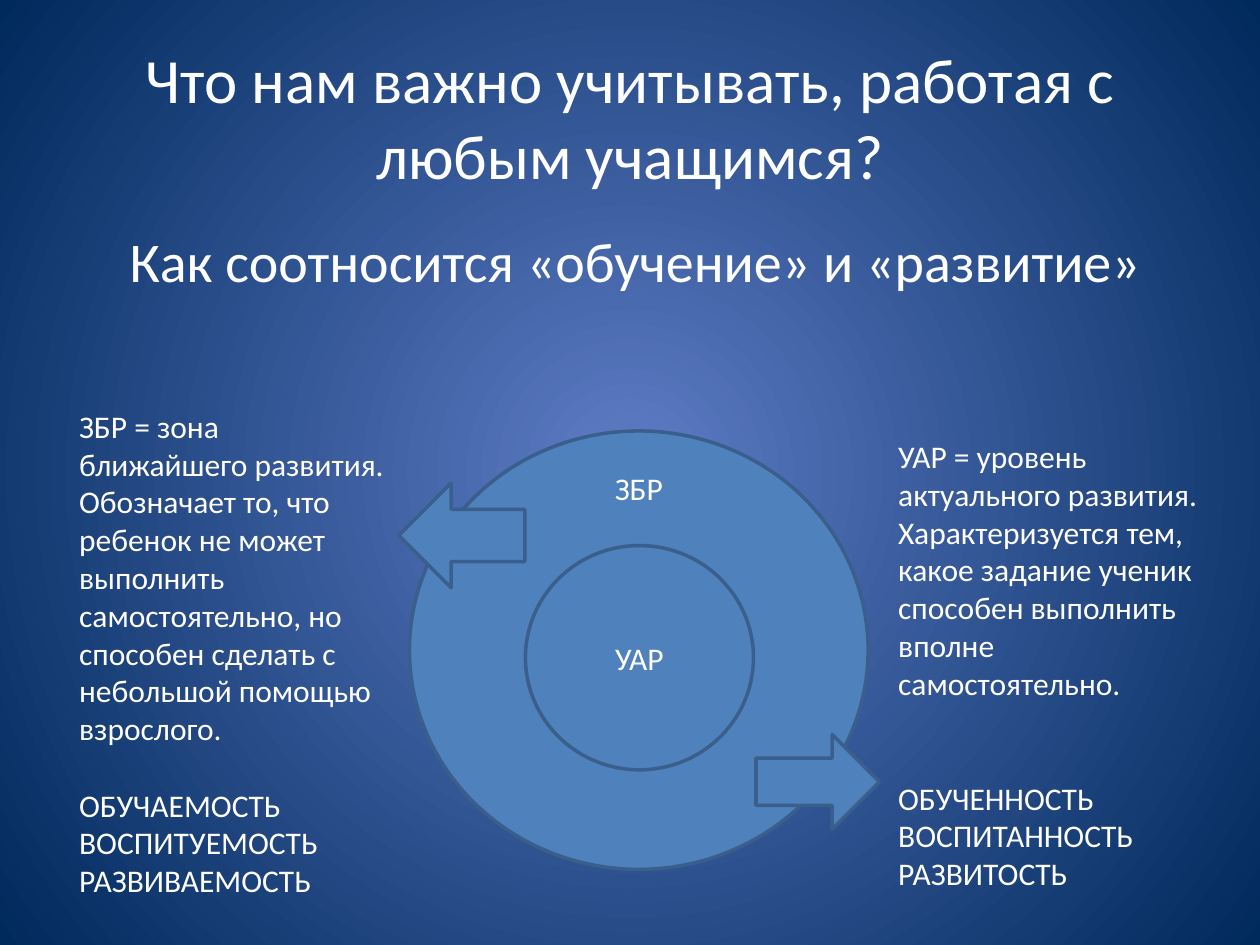
from dataclasses import dataclass

from lxml.etree import SubElement
from pptx import Presentation
from pptx.dml.color import RGBColor
from pptx.enum.shapes import MSO_SHAPE
from pptx.enum.text import MSO_ANCHOR, PP_ALIGN
from pptx.oxml.ns import qn
from pptx.util import Inches, Pt

COLORS = {
    "center": "5E7CC5",
    "edge": "00295C",
    "fill": "4F81BD",
    "outline": "3A5F8C",
    "text": "FFFFFF",
}
FONT = "Calibri"
LINE_GAP = 22


@dataclass(frozen=True)
class Box:
    left: float
    top: float
    width: float
    height: float

    def lengths(self) -> list:
        return [Inches(v) for v in (self.left, self.top, self.width, self.height)]


@dataclass(frozen=True)
class Figure:
    preset: MSO_SHAPE
    box: Box
    rotation: float = 0
    label: str = ""


@dataclass(frozen=True)
class Line:
    text: str
    space_before: float = 0


@dataclass(frozen=True)
class Note:
    box: Box
    lines: tuple
    size: float = 18
    align: PP_ALIGN = PP_ALIGN.LEFT


NOTES = [
    Note(Box(0.42, 1.75, 9.25, 5.42),
         (Line("Как соотносится «обучение» и «развитие»", 6.4),),
         size=32, align=PP_ALIGN.CENTER),
    Note(Box(0.53, 3.18, 2.63, 4.04), (
        Line("ЗБР = зона ближайшего развития. Обозначает то, что ребенок не может "
             "выполнить самостоятельно, но способен сделать с небольшой помощью взрослого."),
        Line("ОБУЧАЕМОСТЬ\vВОСПИТУЕМОСТЬ\vРАЗВИВАЕМОСТЬ", LINE_GAP),
    )),
    Note(Box(7.03, 3.42, 2.72, 3.74), (
        Line("УАР = уровень актуального развития."),
        Line("Характеризуется тем, какое задание ученик способен выполнить "
             "вполне самостоятельно."),
        Line("ОБУЧЕННОСТЬ", 2 * LINE_GAP),
        Line("ВОСПИТАННОСТЬ"),
        Line("РАЗВИТОСТЬ"),
    )),
]
CIRCLES = [
    Figure(MSO_SHAPE.OVAL, Box(3.25, 3.42, 3.64, 3.48)),
    Figure(MSO_SHAPE.OVAL, Box(4.17, 4.33, 1.81, 1.78), label="УАР"),
]
ZONE_LABEL = Note(Box(4.58, 3.67, 0.98, 0.4), (Line("ЗБР"),), align=PP_ALIGN.CENTER)
ARROWS = [
    Figure(MSO_SHAPE.DOWN_ARROW, Box(3.25, 3.75, 0.83, 1), rotation=90),
    Figure(MSO_SHAPE.RIGHT_ARROW, Box(6, 5.83, 0.98, 0.75)),
]


def write_text(text_frame, lines: tuple, *, size: float = 18,
               align: PP_ALIGN = PP_ALIGN.LEFT,
               anchor: MSO_ANCHOR = MSO_ANCHOR.TOP) -> None:
    text_frame.word_wrap = True
    text_frame.vertical_anchor = anchor
    for index, line in enumerate(lines):
        paragraph = text_frame.add_paragraph() if index else text_frame.paragraphs[0]
        paragraph.text = line.text
        paragraph.alignment = align
        paragraph.space_before = Pt(line.space_before)
        for run in paragraph.runs:
            run.font.name = FONT
            run.font.size = Pt(size)
            run.font.color.rgb = RGBColor.from_string(COLORS["text"])


def paint_background(slide) -> None:
    fill = slide.background.fill
    fill.gradient()
    for stop, name in zip(fill.gradient_stops, ("center", "edge")):
        stop.color.rgb = RGBColor.from_string(COLORS[name])
    gradient = slide.element.find(".//" + qn("a:gradFill"))
    gradient.remove(gradient.find(qn("a:lin")))
    circle = SubElement(gradient, qn("a:path"), {"path": "circle"})
    SubElement(circle, qn("a:fillToRect"), {side: "50000" for side in "ltrb"})


def add_title(slide, text: str, box: Box) -> None:
    title = slide.shapes.title
    title.left, title.top, title.width, title.height = box.lengths()
    write_text(title.text_frame, (Line(text),), size=36,
               align=PP_ALIGN.CENTER, anchor=MSO_ANCHOR.MIDDLE)


def add_note(slide, note: Note) -> None:
    shape = slide.shapes.add_textbox(*note.box.lengths())
    write_text(shape.text_frame, note.lines, size=note.size, align=note.align)


def add_figure(slide, figure: Figure) -> None:
    shape = slide.shapes.add_shape(figure.preset, *figure.box.lengths())
    shape.rotation = figure.rotation
    shape.shadow.inherit = False
    shape.fill.solid()
    shape.fill.fore_color.rgb = RGBColor.from_string(COLORS["fill"])
    shape.line.color.rgb = RGBColor.from_string(COLORS["outline"])
    shape.line.width = Pt(2)
    if figure.label:
        write_text(shape.text_frame, (Line(figure.label),),
                   align=PP_ALIGN.CENTER, anchor=MSO_ANCHOR.MIDDLE)


def main() -> None:
    presentation = Presentation()
    presentation.slide_width, presentation.slide_height = Inches(10), Inches(7.5)
    slide = presentation.slides.add_slide(presentation.slide_layouts[5])
    paint_background(slide)
    add_title(slide, "Что нам важно учитывать, работая с любым учащимся?",
              Box(0.5, 0.3, 9, 1.25))
    for note in NOTES:
        add_note(slide, note)
    for circle in CIRCLES:
        add_figure(slide, circle)
    add_note(slide, ZONE_LABEL)
    for arrow in ARROWS:
        add_figure(slide, arrow)
    presentation.save("out.pptx")


if __name__ == "__main__":
    main()
